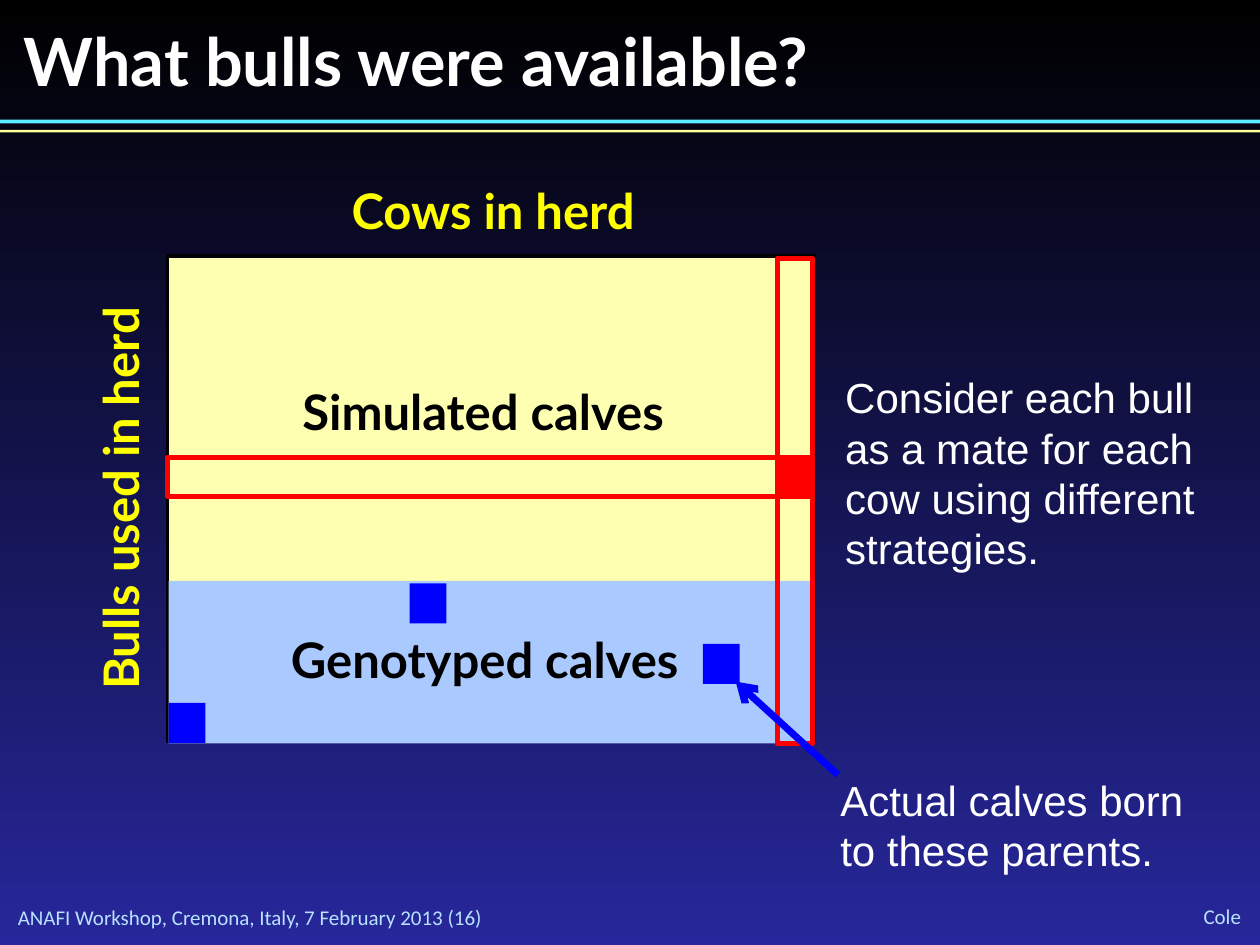
import dataclasses
import typing

import lxml.etree
import pptx
import pptx.dml.color
import pptx.enum.dml
import pptx.enum.shapes
import pptx.enum.text
import pptx.oxml.ns
import pptx.util

Cm = pptx.util.Cm
Pt = pptx.util.Pt
Align = pptx.enum.text.PP_ALIGN
Anchor = pptx.enum.text.MSO_ANCHOR

COLORS = {
    "black": "000000", "navy": "27279B", "white": "FFFFFF",
    "cyan": "5BEFFF", "pale": "FFFF99", "cream": "FFFFB2",
    "sky": "A9C9FF", "yellow": "FFFF00", "red": "FF0000",
    "blue": "0000FF", "ice": "B8E2FF",
}


@dataclasses.dataclass
class Box:
    left: float
    top: float
    width: float
    height: float
    fill: typing.Optional[str] = None
    line: typing.Optional[str] = None
    weight: float = 0


@dataclasses.dataclass
class Style:
    font: str
    size: float
    color: str
    bold: bool = False
    align: Align = Align.LEFT
    anchor: Anchor = Anchor.TOP
    inset: bool = True


@dataclasses.dataclass
class Label:
    text: str
    left: float
    top: float
    width: float
    height: float
    style: Style
    turn: float = 0


TITLE = Style("Lato", 38, "white", True, inset=False)
AXIS = Style("Lato", 28, "yellow", True, Align.CENTER)
AREA = Style("Lato", 28, "black", True, Align.CENTER)
NOTE = Style("Arial", 24, "white")
FOOT = Style("Calibri", 12, "ice", anchor=Anchor.MIDDLE, inset=False)
CREDIT = dataclasses.replace(FOOT, align=Align.RIGHT)

SIDE, TALL = 0.74, 0.81
HEAD = Label("What bulls were available?", 0.48, 0.41, 22.86, 1.63, TITLE)
RULES = [
    Box(0, 2.41, 25.4, 0.08, "cyan"),
    Box(0, 2.62, 25.4, 0.05, "pale"),
]
GRID = [
    Box(3.38, 5.16, 13.03, 9.78, "cream", "black", 2),
    Box(3.4, 11.71, 13.03, 3.28, "sky"),
]
MATES = [
    Box(15.67, 5.21, 0.71, 9.78, line="red", weight=3),
    Box(3.38, 9.22, 12.98, 0.79, line="red", weight=3),
    Box(15.67, 9.22, SIDE, TALL, "red"),
]
CALVES = [
    Box(left, top, SIDE, TALL, "blue")
    for left, top in [(3.4, 14.17), (8.26, 11.76), (14.17, 12.98)]
]
LABELS = [
    Label("ANAFI Workshop, Cremona, Italy, 7 February 2013 (16)",
          0.36, 18.24, 13.26, 0.5, FOOT),
    Label("Cole", 22.15, 18.21, 2.87, 0.53, CREDIT),
    Label("Bulls used in herd", -2.46, 9.32, 9.78, 1.45, AXIS, 270),
    Label("Cows in herd", 5.05, 3.51, 9.78, 1.45, AXIS),
    Label("Simulated calves", 4.85, 7.57, 9.78, 1.45, AREA),
    Label("Genotyped calves", 4.88, 12.57, 9.78, 1.45, AREA),
    Label("Consider each bull as a mate for each cow using different strategies.",
          16.79, 7.37, 8.13, 4.37, NOTE),
    Label("Actual calves born to these parents.",
          16.69, 15.49, 8.13, 2.31, NOTE),
]


def tint(name: str) -> pptx.dml.color.RGBColor:
    return pptx.dml.color.RGBColor.from_string(COLORS[name])


def draw_box(slide, box: Box) -> None:
    shape = slide.shapes.add_shape(
        pptx.enum.shapes.MSO_SHAPE.RECTANGLE,
        Cm(box.left), Cm(box.top), Cm(box.width), Cm(box.height))
    shape.shadow.inherit = False
    if box.fill:
        shape.fill.solid()
        shape.fill.fore_color.rgb = tint(box.fill)
    else:
        shape.fill.background()
    if box.line:
        shape.line.color.rgb = tint(box.line)
        shape.line.width = Pt(box.weight)
    else:
        shape.line.fill.background()


def set_text(shape, label: Label) -> None:
    style = label.style
    shape.left, shape.top = Cm(label.left), Cm(label.top)
    shape.width, shape.height = Cm(label.width), Cm(label.height)
    shape.rotation = label.turn
    frame = shape.text_frame
    frame.text = label.text
    frame.word_wrap = True
    frame.auto_size = pptx.enum.text.MSO_AUTO_SIZE.NONE
    frame.vertical_anchor = style.anchor
    if not style.inset:
        frame.margin_left = frame.margin_right = Cm(0)
        frame.margin_top = frame.margin_bottom = Cm(0)
    line = frame.paragraphs[0]
    line.alignment = style.align
    line.font.name = style.font
    line.font.size = Pt(style.size)
    line.font.bold = style.bold
    line.font.color.rgb = tint(style.color)


def draw_label(slide, label: Label) -> None:
    shape = slide.shapes.add_textbox(
        Cm(label.left), Cm(label.top), Cm(label.width), Cm(label.height))
    set_text(shape, label)


def draw_arrow(slide, start: tuple, end: tuple) -> None:
    arrow = slide.shapes.add_connector(
        pptx.enum.shapes.MSO_CONNECTOR.STRAIGHT,
        *(Cm(value) for value in start + end))
    arrow.line.color.rgb = tint("blue")
    arrow.line.width = Pt(4)
    name = pptx.oxml.ns.qn
    props = arrow.element.spPr
    line = props.find(name("a:ln"))
    lxml.etree.SubElement(line, name("a:tailEnd"), type="arrow")
    lxml.etree.SubElement(props, name("a:effectLst"))


def paint_back(slide) -> None:
    fill = slide.background.fill
    fill.gradient()
    fill.gradient_angle = 270
    for stop, place, color in zip(fill.gradient_stops, (0, 1), ("black", "navy")):
        stop.position = place
        stop.color.rgb = tint(color)


def main() -> None:
    deck = pptx.Presentation()
    deck.slide_width, deck.slide_height = Cm(25.4), Cm(19.05)
    slide = deck.slides.add_slide(deck.slide_layouts.get_by_name("Title Only"))
    paint_back(slide)
    set_text(slide.shapes.title, HEAD)
    for box in RULES + GRID + MATES + CALVES:
        draw_box(slide, box)
    for label in LABELS:
        draw_label(slide, label)
    draw_arrow(slide, (16.89, 15.62), (14.83, 13.74))
    deck.save("out.pptx")


if __name__ == "__main__":
    main()
